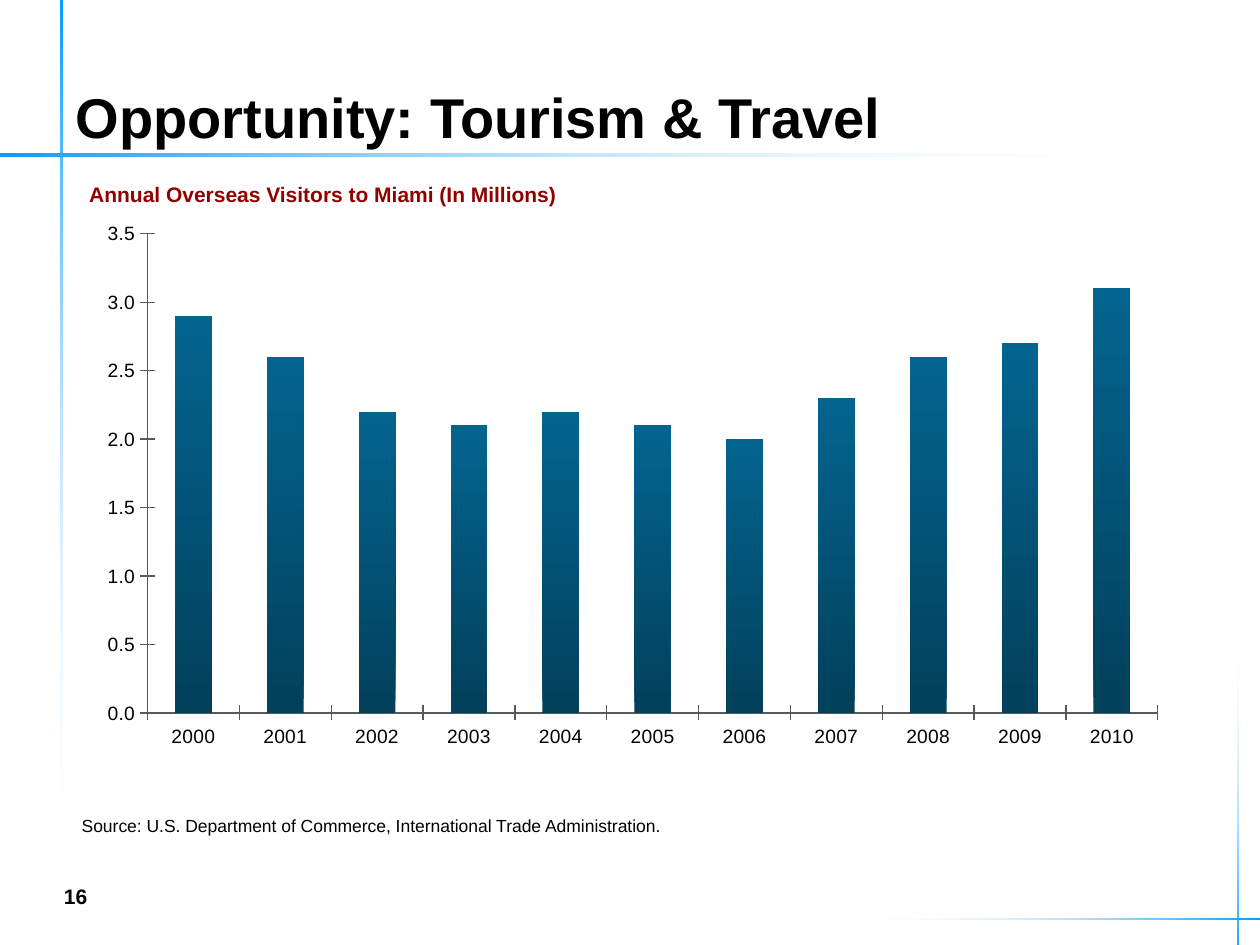
from lxml import etree
from pptx import Presentation
from pptx.chart.data import CategoryChartData
from pptx.dml.color import RGBColor
from pptx.enum import chart as ch, shapes, text
from pptx.oxml import parse_xml
from pptx.oxml.ns import nsdecls, qn
from pptx.util import Inches, Pt

BLACK = RGBColor(0x00, 0x00, 0x00)
WHITE = RGBColor(0xFF, 0xFF, 0xFF)
BLUE = RGBColor(0x00, 0x99, 0xFF)
RED = RGBColor(0x92, 0x00, 0x00)
GREY = RGBColor(0x59, 0x59, 0x59)
BAR_DARK = RGBColor(0x02, 0x40, 0x5C)
BAR_LIGHT = RGBColor(0x03, 0x64, 0x8F)


def set_gradient(fill, start, end, angle):
    fill.gradient()
    fill.gradient_angle = angle
    for stop, color in zip(fill.gradient_stops, (start, end)):
        stop.color.rgb = color


def write(sp, words, anchor, size, color, bold):
    tf = sp.text_frame
    for name, value in {"word_wrap": True, "vertical_anchor": anchor,
                        "auto_size": text.MSO_AUTO_SIZE.NONE}.items():
        setattr(tf, name, value)
    p = tf.paragraphs[0]
    p.alignment = text.PP_ALIGN.LEFT
    r = p.add_run()
    r.text = words
    for name, value in {"name": "Arial", "size": Pt(size), "bold": bold}.items():
        setattr(r.font, name, value)
    r.font.color.rgb = color


prs = Presentation()
prs.slide_width, prs.slide_height = Inches(10), Inches(7.5)
s = prs.slides.add_slide(prs.slide_layouts[5])

# Fading guide lines: left, top, width, height, gradient angle
guides = [
    (-0.17, 1.22, 9.4, 0.02, 0),
    (0.48, -0.09, 0.02, 7.07, 270),
    (6.71, 7.29, 3.35, 0.01, 180),
    (9.82, 5.04, 0.01, 2.64, 90),
]
for *box, angle in guides:
    sp = s.shapes.add_shape(shapes.MSO_SHAPE.RECTANGLE, *map(Inches, box))
    sp.shadow.inherit = False
    sp.line.fill.background()
    set_gradient(sp.fill, BLUE, WHITE, angle)
    faded = sp.fill._fill._gradFill.findall(".//" + qn("a:srgbClr"))[-1]
    etree.SubElement(faded, qn("a:alpha")).set("val", "0")

# Title
title = s.shapes.title
title.left, title.top, title.width, title.height = map(Inches, (0.5, -0.01, 9, 1.25))
write(title, "Opportunity: Tourism & Travel", text.MSO_ANCHOR.BOTTOM, 32, BLACK, True)

# Visitor chart
data = CategoryChartData(number_format="0.0")
data.categories = [str(year) for year in range(2000, 2011)]
data.add_series("Series 1", (2.9, 2.6, 2.2, 2.1, 2.2, 2.1, 2, 2.3, 2.6, 2.7, 3.1))
chart = s.shapes.add_chart(ch.XL_CHART_TYPE.COLUMN_CLUSTERED,
                           *map(Inches, (0.54, 1.46, 9.01, 4.94)), data).chart
chart.has_legend = False
chart.has_title = False
chart.font.name, chart.font.size = "Arial", Pt(11)
chart.font.color.rgb = BLACK

plot = chart.plots[0]
plot.gap_width = 150
plot.vary_by_categories = False
set_gradient(plot.series[0].format.fill, BAR_DARK, BAR_LIGHT, 90)

for axis in (chart.category_axis, chart.value_axis):
    axis.has_major_gridlines = False
    axis.major_tick_mark = ch.XL_TICK_MARK.CROSS
    axis.format.line.color.rgb = GREY
    axis.format.line.width = Pt(0.75)
for name, value in {"minimum_scale": 0, "maximum_scale": 3.5, "major_unit": 0.5}.items():
    setattr(chart.value_axis, name, value)
labels = chart.value_axis.tick_labels
labels.number_format, labels.number_format_is_linked = "#,##0.0", False

# Fixed inner plot area
area = chart._chartSpace.chart.plotArea
for old in area.findall(qn("c:layout")):
    area.remove(old)
places = {"x": 0.07, "y": 0.08, "w": 0.89, "h": 0.77}
area.insert(0, parse_xml(
    f'<c:layout {nsdecls("c")}><c:manualLayout><c:layoutTarget val="inner"/>'
    '<c:xMode val="edge"/><c:yMode val="edge"/>'
    + "".join(f'<c:{key} val="{value}"/>' for key, value in places.items())
    + "</c:manualLayout></c:layout>"))

# Page number, source and chart heading
TOP, MIDDLE = text.MSO_ANCHOR.TOP, text.MSO_ANCHOR.MIDDLE
notes = [
    ((0.41, 6.91, 0.73, 0.4), "16", MIDDLE, 12, BLACK, True),
    ((0.55, 6.42, 5.75, 0.27),
     "Source: U.S. Department of Commerce, International Trade Administration.",
     TOP, 10, BLACK, False),
    ((0.61, 1.39, 4.08, 0.3), "Annual Overseas Visitors to Miami (In Millions)",
     TOP, 12, RED, True),
]
for box, *style in notes:
    write(s.shapes.add_textbox(*map(Inches, box)), *style)

prs.save("out.pptx")
